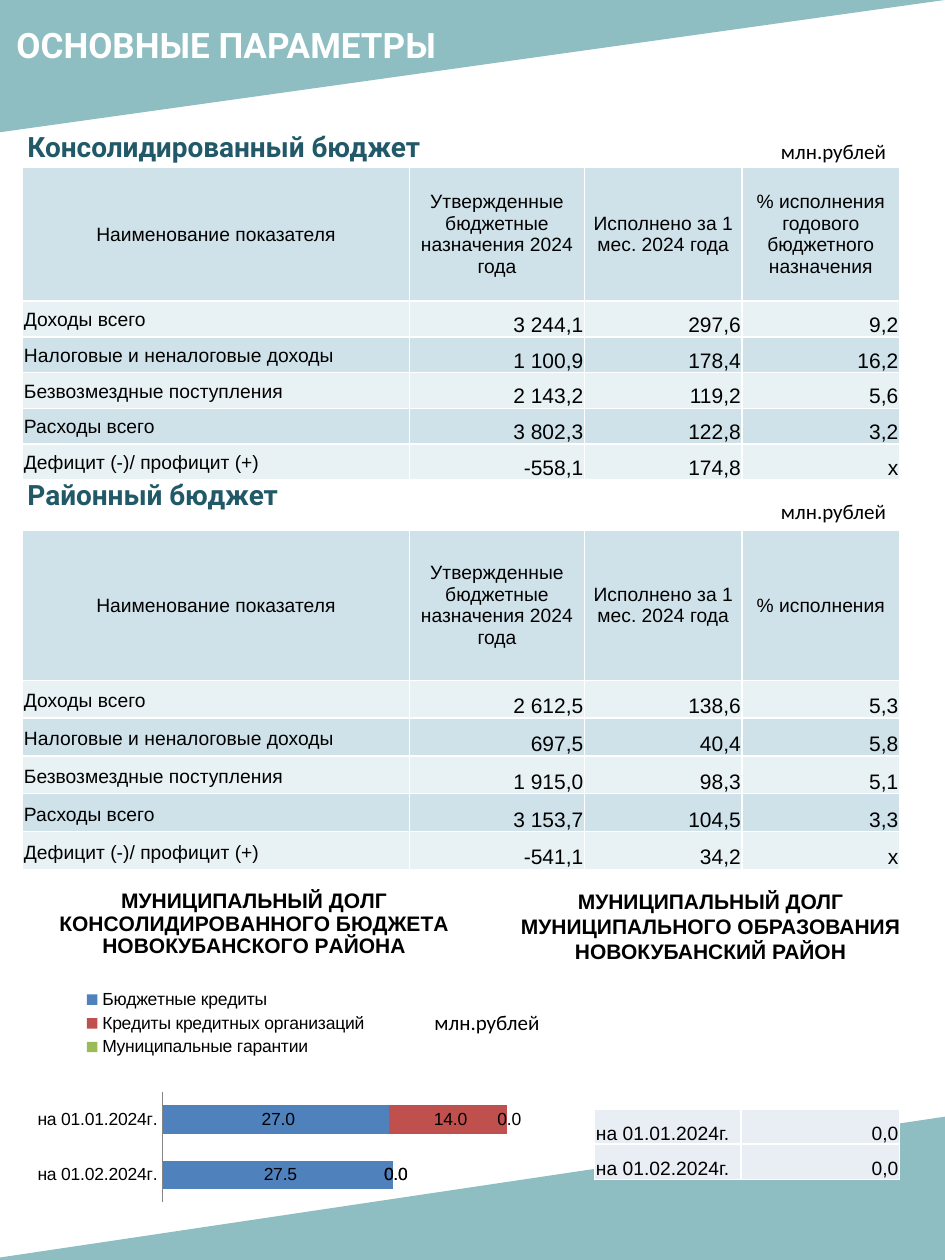
from lxml.etree import SubElement
from pptx import Presentation
from pptx.chart.data import CategoryChartData
from pptx.dml.color import RGBColor
from pptx.enum.chart import XL_CHART_TYPE, XL_LEGEND_POSITION, XL_TICK_MARK
from pptx.enum.shapes import MSO_SHAPE
from pptx.enum.text import MSO_ANCHOR, PP_ALIGN
from pptx.oxml import parse_xml
from pptx.oxml.ns import nsdecls, qn
from pptx.util import Inches, Pt

COLORS = {
    "corner": "519AA0", "heading": "215968", "white": "FFFFFF", "black": "000000",
    "band_dark": "CFE2EA", "band_light": "E8F1F4", "debt_cell": "E9EDF4",
    "budget_loans": "4F81BD", "bank_loans": "C0504D", "guarantees": "9BBB59",
    "axis": "868686",
}


def write(frame, text, size, font="Arial", color="black", bold=False, align=PP_ALIGN.LEFT):
    paragraph = frame.paragraphs[0]
    paragraph.alignment = align
    run = paragraph.add_run()
    run.text = text
    run.font.size, run.font.name, run.font.bold = Pt(size), font, bold
    run.font.color.rgb = RGBColor.from_string(COLORS[color])


def fill_cell(cell, text, size, color, align, anchor, top, bottom):
    write(cell.text_frame, text, size, align=align)
    cell.vertical_anchor = anchor
    cell.margin_left = cell.margin_right = Inches(0.01)
    cell.margin_top, cell.margin_bottom = Inches(top), Inches(bottom)
    properties = cell._tc.get_or_add_tcPr()
    for side in ("lnL", "lnR", "lnT", "lnB"):
        properties.append(parse_xml(
            f'<a:{side} {nsdecls("a")} w="12192"><a:solidFill>'
            f'<a:srgbClr val="{COLORS["white"]}"/></a:solidFill></a:{side}>'))
    cell.fill.solid()
    cell.fill.fore_color.rgb = RGBColor.from_string(COLORS[color])


prs = Presentation()
prs.slide_width, prs.slide_height = Inches(7.5), Inches(10)
slide = prs.slides.add_slide(prs.slide_layouts[5])
shapes = slide.shapes

# Corner triangles
for left, top, width, height, flip in [
    (0, 0, 7.5, 1.05, "flipV"),
    (-0.13, 8.86, 7.65, 1.14, "flipH"),
]:
    corner = shapes.add_shape(MSO_SHAPE.RIGHT_TRIANGLE, Inches(left), Inches(top),
                              Inches(width), Inches(height))
    corner.shadow.inherit = False
    corner.line.fill.background()
    corner.fill.solid()
    corner.fill.fore_color.rgb = RGBColor.from_string(COLORS["corner"])
    corner._element.spPr.find(qn("a:xfrm")).set(flip, "1")
    SubElement(corner._element.spPr.find(".//" + qn("a:srgbClr")), qn("a:alpha"), val="64000")

# Slide title, brought in front of the triangles
title = shapes.title
title.left, title.top, title.width, title.height = (
    Inches(0.03), Inches(0.14), Inches(4.87), Inches(0.43))
title.text_frame.vertical_anchor = MSO_ANCHOR.TOP
write(title.text_frame, "ОСНОВНЫЕ ПАРАМЕТРЫ", 20, "Roboto", "white", True)
shapes._spTree.append(title._element)

# Section headings
for heading, top in [("Консолидированный бюджет", 0.98), ("Районный бюджет", 3.74)]:
    box = shapes.add_textbox(Inches(0.12), Inches(top), Inches(4.87), Inches(0.36))
    box.text_frame.word_wrap = True
    write(box.text_frame, heading, 16, "Roboto", "heading", True)

# Unit notes, wide enough for one line
for left, top in [(6.1, 1.05), (6.1, 3.91), (3.35, 7.96)]:
    unit = shapes.add_textbox(Inches(left), Inches(top), Inches(1.1), Inches(0.3))
    unit.text_frame.word_wrap = True
    write(unit.text_frame, "млн.рублей", 12, "Calibri")

# Budget tables
header = ["Наименование показателя", "Утвержденные бюджетные назначения 2024 года",
          "Исполнено за 1 мес. 2024 года"]
indicators = ["Доходы всего", "Налоговые и неналоговые доходы", "Безвозмездные поступления",
              "Расходы всего", "Дефицит (-)/ профицит (+)"]
budgets = [
    (1.33, 1.06, 0.28, "% исполнения годового бюджетного назначения", [
        ("3 244,1", "297,6", "9,2"), ("1 100,9", "178,4", "16,2"),
        ("2 143,2", "119,2", "5,6"), ("3 802,3", "122,8", "3,2"),
        ("-558,1", "174,8", "х")]),
    (4.21, 1.19, 0.3, "% исполнения", [
        ("2 612,5", "138,6", "5,3"), ("697,5", "40,4", "5,8"),
        ("1 915,0", "98,3", "5,1"), ("3 153,7", "104,5", "3,3"),
        ("-541,1", "34,2", "х")]),
]
for top, header_height, row_height, last_header, figures in budgets:
    rows = [header + [last_header]] + [[name, *row] for name, row in zip(indicators, figures)]
    budget = shapes.add_table(6, 4, Inches(0.18), Inches(top), Inches(6.95),
                              Inches(header_height + 5 * row_height)).table
    for column, width in zip(budget.columns, [3.07, 1.39, 1.25, 1.25]):
        column.width = Inches(width)
    for r, row in enumerate(rows):
        budget.rows[r].height = Inches(row_height if r else header_height)
        band = "band_light" if r % 2 else "band_dark"
        for c, text in enumerate(row):
            cell = budget.cell(r, c)
            if r == 0:
                fill_cell(cell, text, 11, band, PP_ALIGN.CENTER, MSO_ANCHOR.MIDDLE, 0.05, 0.05)
            elif c == 0:
                fill_cell(cell, text, 11, band, PP_ALIGN.LEFT, MSO_ANCHOR.BOTTOM, 0.05, 0.05)
            else:
                fill_cell(cell, text, 12, band, PP_ALIGN.RIGHT, MSO_ANCHOR.BOTTOM, 0.01, 0)

# Municipal debt of the district
debt_heading = shapes.add_textbox(Inches(3.78), Inches(7), Inches(3.72), Inches(0.71))
debt_heading.text_frame.word_wrap = True
write(debt_heading.text_frame,
      "МУНИЦИПАЛЬНЫЙ ДОЛГ МУНИЦИПАЛЬНОГО ОБРАЗОВАНИЯ НОВОКУБАНСКИЙ РАЙОН",
      12, bold=True, align=PP_ALIGN.CENTER)

dates = ["на 01.01.2024г.", "на 01.02.2024г."]
debt = shapes.add_table(2, 2, Inches(4.72), Inches(8.8), Inches(2.41), Inches(0.57)).table
debt.columns[0].width, debt.columns[1].width = Inches(1.16), Inches(1.26)
for r, date in enumerate(dates):
    debt.rows[r].height = Inches(0.28)
    for c, (text, align) in enumerate([(date, PP_ALIGN.LEFT), ("0,0", PP_ALIGN.RIGHT)]):
        fill_cell(debt.cell(r, c), text, 11, "debt_cell", align, MSO_ANCHOR.BOTTOM, 0.01, 0)

# Chart of the consolidated debt
number_format = r"#\ ##0.0"
debt_data = CategoryChartData(number_format=number_format)
debt_data.categories = dates
debt_data.add_series("Бюджетные кредиты", (27.0, 27.5))
debt_data.add_series("Кредиты кредитных организаций", (14.0, 0.0))
debt_data.add_series("Муниципальные гарантии", (0.0, 0.0))
chart = shapes.add_chart(XL_CHART_TYPE.BAR_STACKED, Inches(-0.01), Inches(6.35),
                         Inches(5), Inches(3.51), debt_data).chart
chart.font.size, chart.font.name = Pt(10), "Arial"
chart.font.color.rgb = RGBColor.from_string(COLORS["black"])

chart_title = chart.chart_title.text_frame
for i, line in enumerate(["МУНИЦИПАЛЬНЫЙ ДОЛГ", "КОНСОЛИДИРОВАННОГО БЮДЖЕТА",
                          "НОВОКУБАНСКОГО РАЙОНА"]):
    paragraph = chart_title.add_paragraph() if i else chart_title.paragraphs[0]
    run = paragraph.add_run()
    run.text = line
    run.font.size, run.font.name, run.font.bold = Pt(12), "Arial", True
    run.font.color.rgb = RGBColor.from_string(COLORS["black"])

plot = chart.plots[0]
plot.gap_width, plot.overlap, plot.vary_by_categories = 95, 100, False
for series, color in zip(plot.series, ["budget_loans", "bank_loans", "guarantees"]):
    series.format.fill.solid()
    series.format.fill.fore_color.rgb = RGBColor.from_string(COLORS[color])
    labels = series.data_labels
    labels.show_value = True
    labels.number_format, labels.number_format_is_linked = number_format, False

chart.category_axis.reverse_order = True
chart.category_axis.major_tick_mark = XL_TICK_MARK.NONE
chart.category_axis.format.line.color.rgb = RGBColor.from_string(COLORS["axis"])
chart.value_axis.has_major_gridlines = False
chart.value_axis.minimum_scale, chart.value_axis.maximum_scale = 0, 45
chart.value_axis.visible = False
chart.has_legend = True
chart.legend.position = XL_LEGEND_POSITION.TOP
chart.legend.include_in_layout = False

# Places of title, legend and plot as shares of the chart area
chart_xml = chart._chartSpace.chart
for part, before, target, place in [
    (chart_xml.find(qn("c:title")), "c:tx", "", {"x": 0.09, "y": 0.19}),
    (chart.legend._element, "c:legendPos", "", {"x": 0.11, "y": 0.42, "w": 0.5, "h": 0.17}),
    (chart_xml.plotArea, None, "inner", {"x": 0.263, "y": 0.662, "w": 0.601, "h": 0.247}),
]:
    for old in part.findall(qn("c:layout")):
        part.remove(old)
    settings = f'<c:layoutTarget val="{target}"/>' if target else ""
    settings += "".join(f'<c:{key}Mode val="edge"/>' for key in place if key in "xy")
    settings += "".join(f'<c:{key} val="{round(value, 2)}"/>' for key, value in place.items())
    layout = parse_xml(f'<c:layout {nsdecls("c")}><c:manualLayout>{settings}'
                       '</c:manualLayout></c:layout>')
    part.insert(part.index(part.find(qn(before))) + 1 if before else 0, layout)

prs.save("out.pptx")
